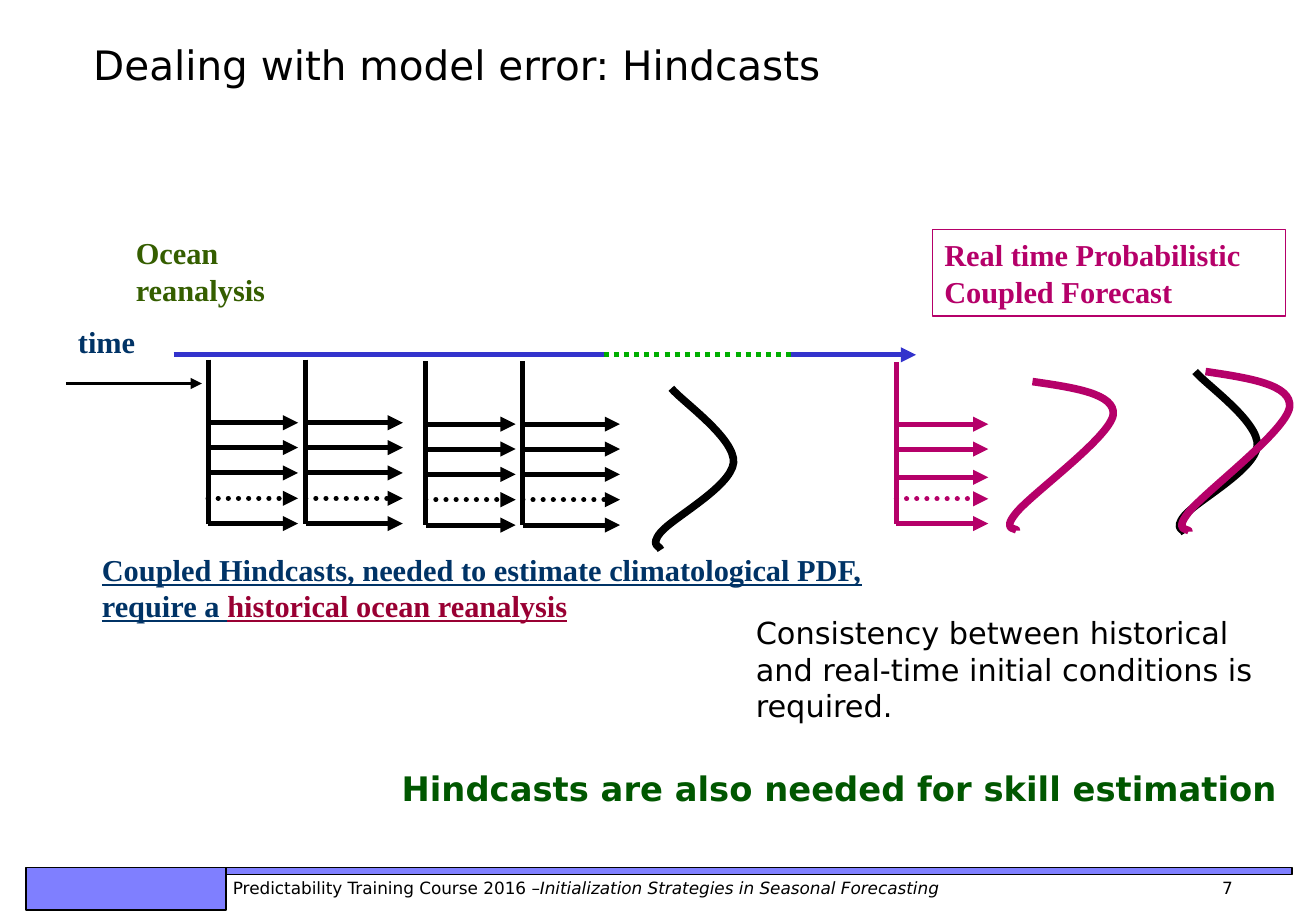
"""Build the slide on hindcasts as a remedy for model error."""
from lxml import etree
from pptx import Presentation
from pptx.dml.color import RGBColor
from pptx.enum.dml import MSO_LINE
from pptx.enum.shapes import MSO_CONNECTOR, MSO_SHAPE
from pptx.enum.text import MSO_ANCHOR, PP_ALIGN
from pptx.oxml.ns import qn
from pptx.util import Cm, Pt

STRAIGHT = MSO_CONNECTOR.STRAIGHT
RECT = MSO_SHAPE.RECTANGLE
DOTTED = MSO_LINE.ROUND_DOT
MIDDLE = MSO_ANCHOR.MIDDLE
LEFT, RIGHT = PP_ALIGN.LEFT, PP_ALIGN.RIGHT

SANS, SERIF = "DejaVu Sans", "Times New Roman"
COLORS = {
    "black": "000000", "bar": "0000FF", "ocean": "355E00", "navy": "003366",
    "history": "990033", "forecast": "B50069", "timeline": "3333CC",
    "gap": "00AE00", "skill": "005700",
}
HINDCAST_ROWS = (1.32, 1.84, 2.37, 2.9, 3.43)
FORECAST_ROWS = (1.3, 1.82, 2.41, 2.86, 3.38)
DOTTED_ROW = 3
CLIMATE_PDF = [(.26, 0), (.38, .08), (.99, .31), (.97, .46), (.94, .61),
               (.28, .8), (.14, .89), (0, .98), (.15, .98), (.14, 1)]
FORECAST_PDF = [(.28, 0), (.64, .04), (1, .08), (.98, .22), (.95, .37),
                (.28, .74), (.14, .87), (0, 1), (.16, .97), (.14, .99)]


def rgb(name):
    """Return the named colour."""
    return RGBColor.from_string(COLORS[name])


def format_run(r, size, color, font=SANS, bold=False, underline=False):
    """Set the font of a run."""
    r.font.name, r.font.size, r.font.bold = font, Pt(size), bold
    r.font.underline = underline
    r.font.color.rgb = rgb(color)


def fill_text(sp, text, size, color, font=SANS, bold=False, align=LEFT):
    """Put one wrapped paragraph in a shape and return it."""
    tf = sp.text_frame
    tf.word_wrap = True
    tf.text = text
    p = tf.paragraphs[0]
    p.alignment = align
    format_run(p.runs[0], size, color, font, bold)
    return p


def add_text(s, x, y, w, h, *args, **kwargs):
    """Add a text box and return its paragraph."""
    return fill_text(s.shapes.add_textbox(Cm(x), Cm(y), Cm(w), Cm(h)), *args, **kwargs)


def add_rect(s, x, y, w, h, line_color, line_width):
    """Add an unfilled rectangle."""
    sp = s.shapes.add_shape(RECT, Cm(x), Cm(y), Cm(w), Cm(h))
    sp.shadow.inherit = False
    sp.fill.background()
    sp.line.color.rgb = rgb(line_color)
    sp.line.width = Pt(line_width)
    return sp


def add_line(s, x1, y1, x2, y2, color, width=3, dotted=False, arrow=False):
    """Add a straight line, optionally dotted or with an arrowhead."""
    c = s.shapes.add_connector(STRAIGHT, Cm(x1), Cm(y1), Cm(x2), Cm(y2))
    c.line.color.rgb = rgb(color)
    c.line.width = Pt(width)
    ln = c.line._get_or_add_ln()
    if dotted:
        c.line.dash_style = DOTTED
    if arrow:
        etree.SubElement(ln, qn("a:tailEnd"), type="triangle")
    if dotted and arrow:
        ln.set("cap", "rnd")
    etree.SubElement(c._element.spPr, qn("a:effectLst"))


def add_pdf(s, x, y, w, h, outline, color):
    """Draw a probability curve of cubic segments in the given box."""
    nodes = [(Cm(x + u * w), Cm(y + v * h)) for u, v in outline]
    builder = s.shapes.build_freeform(*nodes[0], scale=1.0)
    builder.add_line_segments(nodes[1:], close=False)
    sp = builder.convert_to_shape()
    segments = list(sp._element.spPr.iter(qn("a:lnTo")))
    for i in range(0, len(segments), 3):
        curve = etree.Element(qn("a:cubicBezTo"))
        segments[i].addprevious(curve)
        for segment in segments[i:i + 3]:
            curve.append(segment[0])
            segment.getparent().remove(segment)
    sp.shadow.inherit = False
    sp.fill.background()
    sp.line.color.rgb = rgb(color)
    sp.line.width = Pt(4.5)


def add_ensemble(s, x, y, length, rows, color):
    """Draw a start date with its ensemble of forecast arrows."""
    add_line(s, x, y, x, y + rows[-1], color)
    for i, row in enumerate(rows):
        add_line(s, x, y + row, x + length, y + row, color,
                 dotted=i == DOTTED_ROW, arrow=True)


def add_title(s, x, y, w, h):
    """Add the slide title."""
    p = add_text(s, x, y, w, h, "Dealing with model error: Hindcasts", 24, "black")
    p.line_spacing = Pt(32)
    tf = s.shapes[-1].text_frame
    tf.vertical_anchor = MIDDLE
    tf.margin_left = tf.margin_right = tf.margin_top = tf.margin_bottom = 0


def add_timeline(s, x, y):
    """Draw the reanalysis timeline with its labels."""
    add_line(s, x, y, x + 8.99, y, "timeline")
    add_line(s, x + 8.99, y, x + 12.9, y, "gap", dotted=True)
    add_line(s, x + 12.9, y, x + 15.52, y, "timeline", arrow=True)
    add_text(s, x - 1.04, y - 2.64, 5, 1.78, "Ocean reanalysis", 18, "ocean", SERIF, True)
    add_text(s, x - 2.25, y - .79, 2.18, 1.02, "time", 18, "navy", SERIF, True)
    add_line(s, x - 2.25, y + .6, x + .59, y + .6, "black", 2.25, arrow=True)


def add_hindcasts(s, x, y):
    """Draw the hindcast ensembles, their climate and caption."""
    for dx, dy, length in ((0, 0, 1.88), (2.04, 0, 2.03), (4.55, .03, 1.88), (6.58, .03, 2.03)):
        add_ensemble(s, x + dx, y + dy, length, HINDCAST_ROWS, "black")
    add_pdf(s, x + 9.21, y + .6, 1.83, 3.38, CLIMATE_PDF, "black")
    p = add_text(s, x - 2.47, y + 3.88, 17.09, 1.78,
                 "Coupled Hindcasts, needed to estimate climatological PDF, require a ",
                 18, "navy", SERIF, True)
    p.runs[0].font.underline = True
    r = p.add_run()
    r.text = "historical ocean reanalysis"
    format_run(r, 18, "history", SERIF, True, True)


def add_forecast(s, x, y):
    """Draw the real-time forecast and compare it with the climate."""
    add_ensemble(s, x, y, 1.92, FORECAST_ROWS, "forecast")
    add_pdf(s, x + 2.17, y + .41, 2.41, 3.15, FORECAST_PDF, "forecast")
    add_pdf(s, x + 5.77, y + .2, 1.83, 3.38, CLIMATE_PDF, "black")
    add_pdf(s, x + 5.76, y + .2, 2.51, 3.38, FORECAST_PDF, "forecast")
    sp = add_rect(s, x + .75, y - 2.77, 7.39, 1.81, "forecast", .75)
    fill_text(sp, "Real time Probabilistic Coupled Forecast", 18, "forecast", SERIF, True)


def add_conclusions(s, x, y, right):
    """Add the two closing statements."""
    add_text(s, x, y, 11.2, 2.57,
             "Consistency between historical and real-time initial conditions is required.",
             18, "black")
    add_text(s, x - 11.99, y + 3.21, right - x + 11.99, 1.12,
             "Hindcasts are also needed for skill estimation", 20, "skill",
             bold=True, align=RIGHT)


def add_footer(s, x, y, w):
    """Draw the footer bars, course name and page number."""
    for left, width, height in ((x, 4.17, .89), (x + 4.17, w - 4.17, .15)):
        sp = add_rect(s, left, y, width, height, "black", 1)
        sp.fill.solid()
        sp.fill.fore_color.rgb = rgb("bar")
        color = sp._element.spPr.find(qn("a:solidFill"))[0]
        etree.SubElement(color, qn("a:alpha"), val="50000")
    p = add_text(s, x + 4.07, y + .08, 22.88, .69,
                 "Predictability Training Course 2016 –", 10, "black")
    tabs = etree.SubElement(p._p.get_or_add_pPr(), qn("a:tabLst"))
    etree.SubElement(tabs, qn("a:tab"), pos=str(Cm(20.68)), algn="l")
    for text, italic in (("Initialization Strategies in Seasonal Forecasting", True),
                         ("\t7", False)):
        r = p.add_run()
        r.text = text
        format_run(r, 10, "black")
        r.font.italic = italic


def main():
    """Build and save the presentation."""
    prs = Presentation()
    prs.slide_width, prs.slide_height = Cm(27.51), Cm(19.05)
    s = prs.slides.add_slide(prs.slide_layouts[6])
    add_footer(s, .55, 18.14, 26.46)
    add_title(s, 1.95, .43, 25.22, 1.7)
    add_hindcasts(s, 4.35, 7.52)
    add_forecast(s, 18.74, 7.57)
    add_timeline(s, 3.63, 7.42)
    add_conclusions(s, 15.55, 12.72, 26.95)
    prs.save("out.pptx")


if __name__ == "__main__":
    main()
